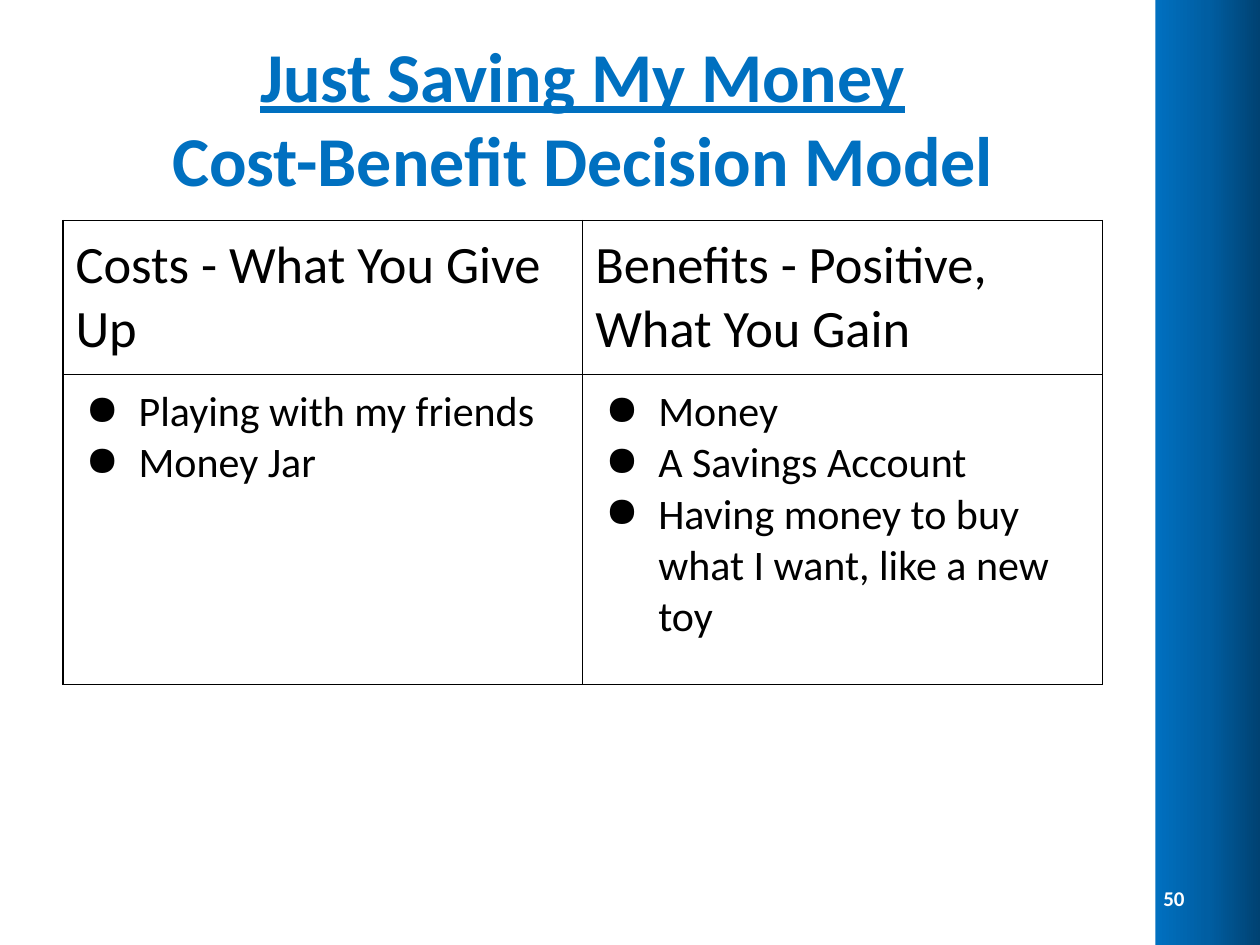
"""Build the cost-benefit slide on saving money."""
from copy import deepcopy

from lxml import etree
from pptx import Presentation
from pptx.dml import color
from pptx.enum import shapes, text
from pptx.oxml import ns
from pptx.util import Inches, Pt


def rgb(value):
    return color.RGBColor.from_string(value)


def write(para, words, **formats):
    span = para.add_run()
    span.text = words
    tint = formats.pop("tint", "000000")
    for name, value in {"name": "Calibri", **formats}.items():
        setattr(span.font, name, value)
    span.font.color.rgb = rgb(tint)


deck = Presentation()
deck.slide_width, deck.slide_height = Inches(10), Inches(7.5)
page = deck.slides.add_slide(deck.slide_layouts[6])

band = page.shapes.add_shape(
    shapes.MSO_SHAPE.RECTANGLE, Inches(9.17), 0, Inches(0.83), Inches(7.5))
band.shadow.inherit = False
band.line.fill.background()
band.fill.gradient()
band.fill.gradient_angle = 0
stops = band.element.spPr.find(".//" + ns.qn("a:gsLst"))
stops.insert(1, deepcopy(stops[0]))
shades = [(0, "0070C0"), (0.5, "005EA2"), (1, "004272")]
for stop, (position, shade) in zip(band.fill.gradient_stops, shades):
    stop.position = position
    stop.color.rgb = rgb(shade)

title_lines = [("Just Saving My Money", True), ("Cost-Benefit Decision Model", False)]
labels = [
    ((0.5, 0.3, 8.25, 1.25), 0.1, text.PP_ALIGN.CENTER, title_lines, 40, "0070C0"),
    ((9.08, 6.93, 0.42, 0.4), 0.05, text.PP_ALIGN.RIGHT, [("50", False)], 12, "FFFFFF"),
]
for place, inset, align, lines, size, tint in labels:
    box = page.shapes.add_textbox(*map(Inches, place))
    frame = box.text_frame
    layout = {"word_wrap": True, "vertical_anchor": text.MSO_ANCHOR.MIDDLE,
              "margin_top": Inches(inset), "margin_bottom": Inches(inset)}
    for name, value in layout.items():
        setattr(frame, name, value)
    for index, (words, underline) in enumerate(lines):
        para = frame.add_paragraph() if index else frame.paragraphs[0]
        para.alignment = align
        write(para, words, size=Pt(size), bold=True, underline=underline, tint=tint)

columns = [
    ("Costs - What You Give Up", ["Playing with my friends", "Money Jar"]),
    ("Benefits - Positive, What You Gain",
     ["Money", "A Savings Account", "Having money to buy what I want, like a new toy"]),
]
table = page.shapes.add_table(
    2, 2, Inches(0.5), Inches(1.75), Inches(8.25), Inches(3.68)).table
table.first_row = table.horz_banding = False
for row, height in zip(table.rows, (1.22, 2.46)):
    row.height = Inches(height)

for column, (heading, points) in enumerate(columns):
    for row, lines in enumerate(([heading], points)):
        cell = table.cell(row, column)
        for side in ("left", "right", "top", "bottom"):
            setattr(cell, "margin_" + side, Inches(0.1))
        borders = cell._tc.get_or_add_tcPr()
        for side in "LRTB":
            border = etree.SubElement(borders, ns.qn("a:ln" + side), w=str(Pt(0.75)))
            solid = etree.SubElement(border, ns.qn("a:solidFill"))
            etree.SubElement(solid, ns.qn("a:srgbClr"), val="000000")
        cell.fill.background()
        for index, words in enumerate(lines):
            frame = cell.text_frame
            para = frame.add_paragraph() if index else frame.paragraphs[0]
            if row:
                settings = para._p.get_or_add_pPr()
                settings.set("marL", str(Inches(0.5)))
                settings.set("indent", str(Inches(-0.42)))
                etree.SubElement(settings, ns.qn("a:buChar"), char="●")
            write(para, words, size=Pt(24 if row else 30))

deck.save("out.pptx")
